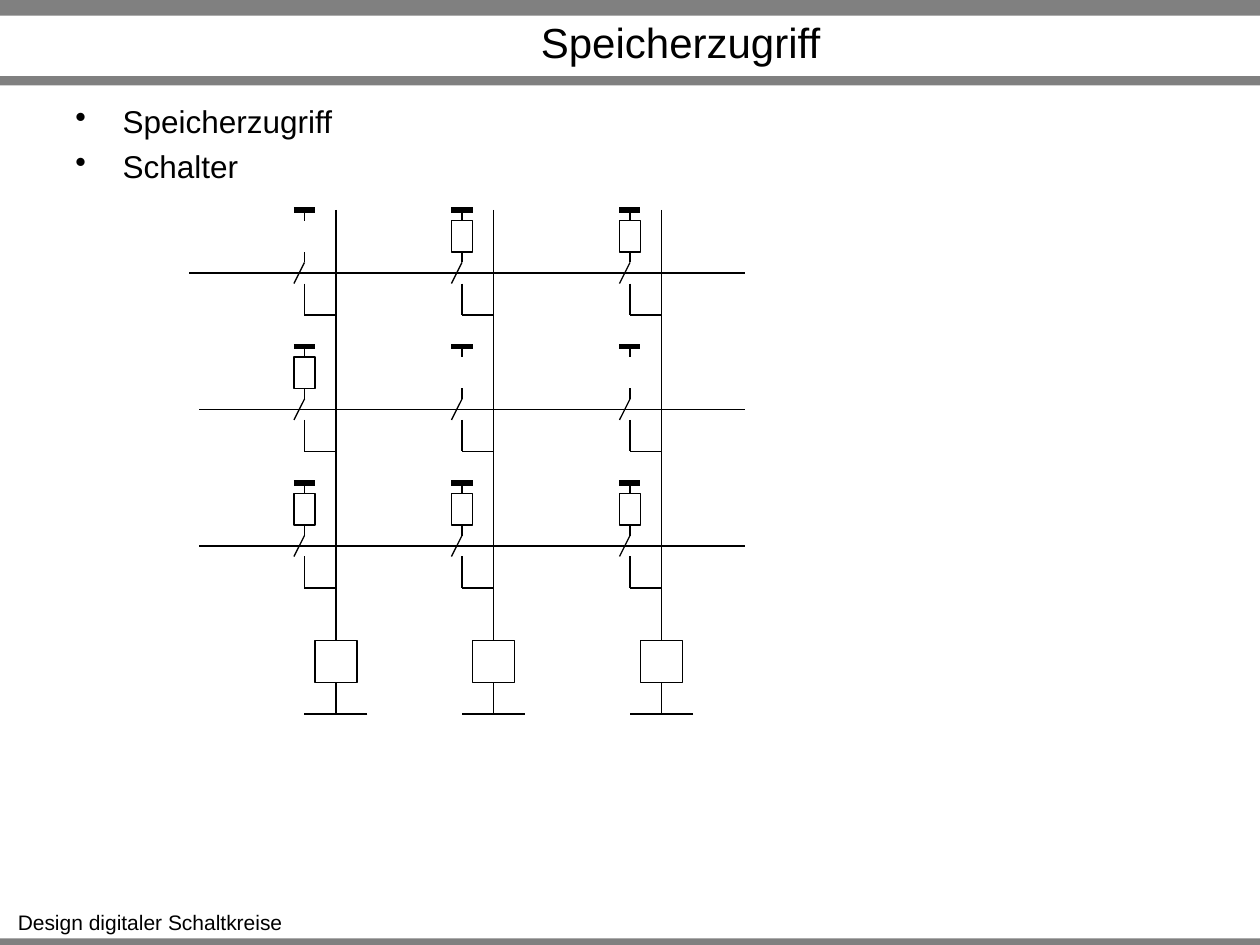
"""Builds the slide on memory access: a three by three grid of switched cells."""
from dataclasses import dataclass

from lxml import etree
from pptx import Presentation
from pptx.dml.color import RGBColor
from pptx.enum.shapes import MSO_CONNECTOR, MSO_SHAPE
from pptx.enum.text import MSO_ANCHOR, PP_ALIGN
from pptx.oxml.ns import qn
from pptx.util import Pt

PX = 9525
STRAIGHT = MSO_CONNECTOR.STRAIGHT
RECTANGLE = MSO_SHAPE.RECTANGLE
LEFT, CENTER = PP_ALIGN.LEFT, PP_ALIGN.CENTER
TOP, MIDDLE = MSO_ANCHOR.TOP, MSO_ANCHOR.MIDDLE


@dataclass(frozen=True)
class Theme:
    """Colours, font, type sizes and line widths."""
    ink: RGBColor = RGBColor(0, 0, 0)
    band: RGBColor = RGBColor(0x80, 0x80, 0x80)
    font: str = "Arial"
    title: int = 24
    body: int = 18
    footer: int = 12
    thin: float = 0.75
    thick: float = 3
    bullet_gap: int = 4


class Board:
    """Draws elements on the current slide in one style."""

    def __init__(self, page, theme):
        self.page = page
        self.theme = theme
        self.shapes = page.shapes

    def start_group(self):
        self.shapes = self.page.shapes.add_group_shape().shapes

    def end_group(self):
        self.shapes = self.page.shapes

    def rectangle(self, x, y, width, height):
        box = self.shapes.add_shape(RECTANGLE, x * PX, y * PX, width * PX, height * PX)
        box.shadow.inherit = False
        return box

    def band(self, y, height):
        box = self.rectangle(0, y, 960, height)
        box.fill.solid()
        box.fill.fore_color.rgb = self.theme.band
        box.line.fill.background()

    def outline(self, x, y, width, height):
        box = self.rectangle(x, y, width, height)
        box.fill.background()
        box.line.color.rgb = self.theme.ink
        box.line.width = Pt(self.theme.thin)

    def line(self, x1, y1, x2, y2, width=None):
        wire = self.shapes.add_connector(STRAIGHT, x1 * PX, y1 * PX, x2 * PX, y2 * PX)
        wire.line.color.rgb = self.theme.ink
        wire.line.width = Pt(width or self.theme.thin)
        etree.SubElement(wire._element.spPr, qn("a:effectLst"))

    def bullet(self, para):
        props = para._p.get_or_add_pPr()
        props.set("marL", str(36 * PX))
        props.set("indent", str(-36 * PX))
        etree.SubElement(props, qn("a:buChar")).set("char", "•")

    def text(self, x, y, width, height, lines, size, align=LEFT, anchor=TOP,
             wrap=True, bullets=False):
        box = self.shapes.add_textbox(x * PX, y * PX, width * PX, height * PX)
        frame = box.text_frame
        frame.word_wrap = wrap
        frame.vertical_anchor = anchor
        for index, words in enumerate(lines):
            para = frame.add_paragraph() if index else frame.paragraphs[0]
            para.alignment = align
            if index:
                para.space_before = Pt(self.theme.bullet_gap)
            if bullets:
                self.bullet(para)
            span = para.add_run()
            span.text = words
            span.font.name = self.theme.font
            span.font.size = Pt(size)
            span.font.color.rgb = self.theme.ink

    def word_line(self, start, y):
        self.line(start, y, start + 24, y)
        self.line(start + 24, y, 568, y)

    def bit_line(self, x, top):
        self.line(x, top, x, 488)
        self.outline(x - 16, 488, 32, 32)
        self.line(x, 520, x, 544)
        self.line(x + 24, 544, x - 24, 544)

    def cell(self, bit_x, top, has_resistor):
        x = bit_x - 24
        if has_resistor:
            self.start_group()
            self.outline(x - 8, top + 8, 16, 24)
        self.line(x, top + 40, x - 8, top + 56)
        self.line(x, top + 56, x, top + 80)
        self.line(x, top + 80, bit_x, top + 80)
        self.line(x, top + 8, x, top)
        self.line(x - 8, top, x + 8, top, self.theme.thick)
        self.line(x, top + 32, x, top + 40)
        self.end_group()


def main():
    deck = Presentation()
    deck.slide_width, deck.slide_height = 960 * PX, 720 * PX
    theme = Theme()
    board = Board(deck.slides.add_slide(deck.slide_layouts[6]), theme)

    for y, height in ((715, 5), (0, 12), (58, 7)):
        board.band(y, height)
    board.text(3, 688, 223, 29, ["Design digitaler Schaltkreise"], theme.footer,
               align=CENTER, wrap=False)
    board.text(125, 14, 787, 36, ["Speicherzugriff"], theme.title,
               align=CENTER, anchor=MIDDLE)
    board.text(48, 73, 864, 63, ["Speicherzugriff", "Schalter"], theme.body, bullets=True)

    bit_columns = (256, 376, 504)
    row_tops = (160, 264, 368)
    word_starts = (144, 152, 152)
    resistors = ((False, True, True), (True, False, False), (True, True, True))

    for start, top in zip(word_starts, row_tops):
        board.word_line(start, top + 48)
    for x in bit_columns:
        board.bit_line(x, row_tops[0])
    for top, row in zip(row_tops, resistors):
        for x, has_resistor in zip(bit_columns, row):
            board.cell(x, top, has_resistor)

    deck.save("out.pptx")


if __name__ == "__main__":
    main()
